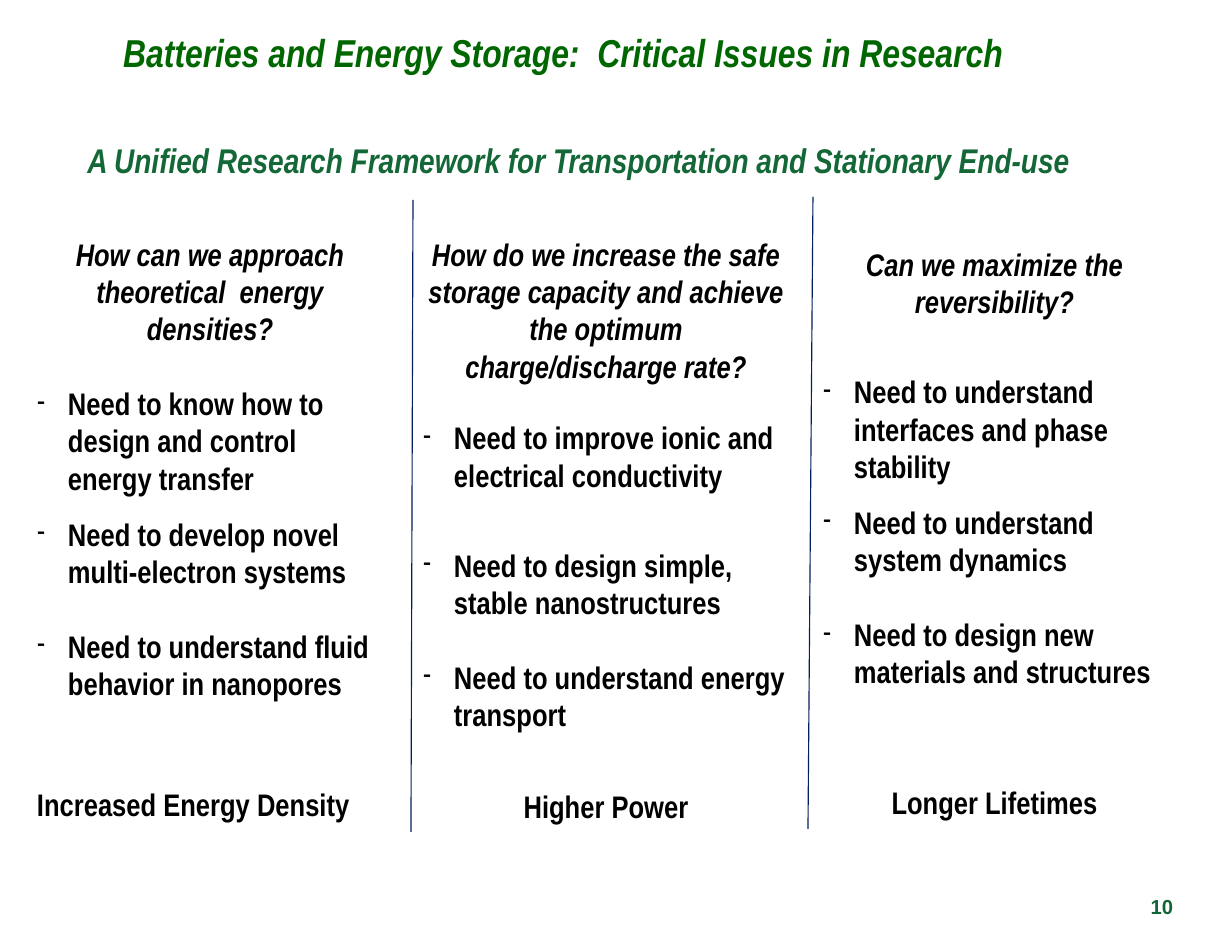
from pptx import Presentation
from pptx.dml.color import RGBColor
from pptx.enum.shapes import MSO_CONNECTOR as Conn
from pptx.enum.text import MSO_ANCHOR as Anchor, PP_ALIGN as Align
from pptx.oxml.ns import qn
from pptx.util import Emu, Pt
from lxml import etree

PX = 914400 / 112
BLACK = RGBColor(0, 0, 0)
GREEN = RGBColor(0x00, 0x66, 0x00)
TEAL = RGBColor(0x14, 0x67, 0x37)
PINE = RGBColor(0x10, 0x66, 0x36)
NAVY = RGBColor(0x00, 0x20, 0x60)


def px(n):
    return Emu(round(n * PX))


def write(frame, text, size, color, align=Align.CENTER, gap=0, dash=False, **form):
    """Add one paragraph, using the empty first one if it is free."""
    para = frame.paragraphs[0]
    if para.runs:
        para = frame.add_paragraph()
    para.alignment = align
    if gap:
        para.space_before = Pt(gap)
    if dash:
        prop = para._p.get_or_add_pPr()
        prop.set("marL", str(px(31)))
        prop.set("indent", str(-px(31)))
        etree.SubElement(prop, qn("a:buFont")).set("typeface", "Arial Narrow")
        etree.SubElement(prop, qn("a:buChar")).set("char", "-")
    run = para.add_run()
    run.text = text
    look = {"name": "Arial Narrow", "size": Pt(size), "bold": True, "italic": False}
    for key, val in {**look, **form}.items():
        setattr(run.font, key, val)
    run.font.color.rgb = color


deck = Presentation()
deck.slide_width, deck.slide_height = px(1232), px(952)
slide = deck.slides.add_slide(deck.slide_layouts[6])


def box(*place):
    frame = slide.shapes.add_textbox(*map(px, place)).text_frame
    inset = {"margin_left": 12, "margin_right": 12, "margin_top": 7, "margin_bottom": 7}
    for key, val in inset.items():
        setattr(frame, key, px(val))
    frame.word_wrap = True
    return frame


# Title and subtitle
write(box(65, 22, 996, 77), "Batteries and Energy Storage:  Critical Issues in Research",
      25, GREEN, italic=True)
write(box(60, 132, 1037, 56),
      "A Unified Research Framework for Transportation and Stationary End-use",
      22, TEAL, italic=True)

# Columns: place, question, needs with the gap above each, goal
columns = [
    ((25, 228, 370, 644), "How can we approach theoretical  energy densities?",
     [(24, "Need to know how to design and control energy transfer"),
      (12, "Need to develop novel multi-electron systems"),
      (24, "Need to understand fluid behavior in nanopores")],
     (54, "Increased Energy Density", Align.LEFT)),
    ((411, 228, 390, 644),
     "How do we increase the safe storage capacity and achieve the optimum "
     "charge/discharge rate?",
     [(22, "Need to improve ionic and electrical conductivity"),
      (34, "Need to design simple, stable nanostructures"),
      (24, "Need to understand energy transport")],
     (35, "Higher Power", Align.CENTER)),
    ((811, 238, 367, 593), "Can we maximize the reversibility?",
     [(34, "Need to understand interfaces and phase stability"),
      (12, "Need to understand system dynamics"),
      (24, "Need to design new materials and structures")],
     (60, "Longer Lifetimes", Align.CENTER)),
]
for place, question, needs, (gap, goal, align) in columns:
    frame = box(*place)
    write(frame, question, 20, BLACK, italic=True)
    for space, need in needs:
        write(frame, need, 20, BLACK, Align.LEFT, space, dash=True)
    write(frame, goal, 20, BLACK, align, gap)

# Column dividers
for ends in [(413, 200, 411, 832), (813, 197, 808, 829)]:
    line = slide.shapes.add_connector(Conn.STRAIGHT, *map(px, ends))
    line.line.color.rgb = NAVY
    line.line.width = Pt(0.75)
    etree.SubElement(line._element.spPr, qn("a:effectLst"))

# Page number
frame = box(1133, 881, 52, 50)
frame.vertical_anchor = Anchor.MIDDLE
write(frame, "10", 13, PINE, Align.RIGHT, name="Arial")

deck.save("out.pptx")
